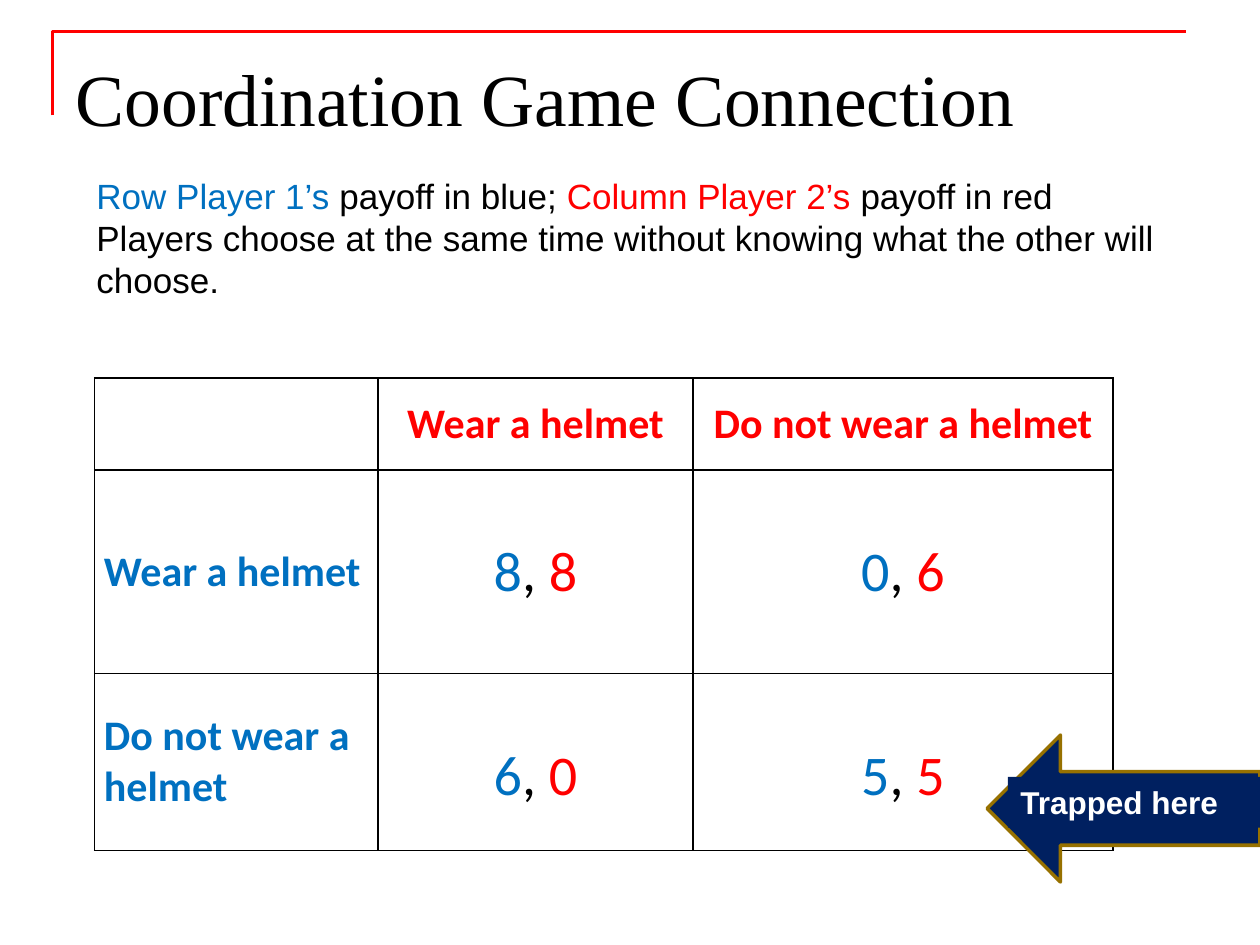
"""Build the coordination game slide with its payoff table."""
from lxml.etree import SubElement
from pptx import Presentation
from pptx.dml.color import RGBColor
from pptx.enum.shapes import MSO_SHAPE as Preset
from pptx.enum.text import MSO_ANCHOR as Anchor, PP_ALIGN as Align
from pptx.oxml.ns import qn
from pptx.util import Pt

COLORS = {"black": "000000", "blue": "0070C0", "red": "FF0000",
          "navy": "002060", "gold": "977100", "white": "FFFFFF"}
FORMATS = {
    "title": {"name": "Times New Roman", "size": Pt(42), "bold": False},
    "intro": {"name": "Arial", "size": Pt(20), "bold": False},
    "strategy": {"name": "Calibri", "size": Pt(24), "bold": True},
    "payoff": {"name": "Calibri", "size": Pt(32), "bold": False},
    "callout": {"name": "Arial", "size": Pt(18), "bold": True},
}


def color(key):
    return RGBColor.from_string(COLORS[key])


class GameSlide:
    def __init__(self, deck):
        self.slide = deck.slides.add_slide(deck.slide_layouts[5])
        self.shapes = self.slide.shapes

    def add_runs(self, paragraph, style, runs, align=Align.LEFT):
        paragraph.alignment = align
        for wording, tint in runs:
            run = paragraph.add_run()
            run.text = wording
            for attribute, value in FORMATS[style].items():
                setattr(run.font, attribute, value)
            run.font.color.rgb = color(tint)

    def paint(self, shape, fill=None, line=None, width=1):
        shape.shadow.inherit = False
        if fill:
            shape.fill.solid()
            shape.fill.fore_color.rgb = color(fill)
        else:
            shape.fill.background()
        if line:
            shape.line.color.rgb = color(line)
            shape.line.width = Pt(width)
        else:
            shape.line.fill.background()

    def corner(self, points):
        start, *others = [(Pt(x), Pt(y)) for x, y in points]
        builder = self.shapes.build_freeform(*start)
        builder.add_line_segments(others, close=False)
        self.paint(builder.convert_to_shape(), line="red", width=1.5)

    def title(self, wording, box):
        heading = self.shapes.title
        edges = ("left", "top", "width", "height")
        for edge, value in zip(edges, box):
            setattr(heading, edge, Pt(value))
        frame = heading.text_frame
        frame.vertical_anchor = Anchor.TOP
        frame.margin_top = Pt(8.5)
        self.add_runs(frame.paragraphs[0], "title", [(wording, "black")])

    def text(self, box, style, paragraphs):
        frame = self.shapes.add_textbox(*map(Pt, box)).text_frame
        frame.word_wrap = True
        for index, runs in enumerate(paragraphs):
            paragraph = frame.add_paragraph() if index else frame.paragraphs[0]
            self.add_runs(paragraph, style, runs)

    def block(self, preset, box, fill, line=None, width=1, label=None):
        shape = self.shapes.add_shape(preset, *map(Pt, box))
        self.paint(shape, fill, line, width)
        if label:
            shape.text_frame.word_wrap = True
            self.add_runs(shape.text_frame.paragraphs[0], "callout", [(label, "white")])

    def border(self, cell):
        properties = cell._tc.get_or_add_tcPr()
        for position, side in enumerate(("lnL", "lnR", "lnT", "lnB")):
            edge = SubElement(properties, qn(f"a:{side}"), w=str(Pt(1)))
            fill = SubElement(edge, qn("a:solidFill"))
            SubElement(fill, qn("a:srgbClr"), val=COLORS["black"])
            properties.insert(position, edge)

    def cell(self, cell, style, runs, align, anchor=Anchor.MIDDLE, top=0):
        margins = {"margin_left": 5.4, "margin_right": 5.4,
                   "margin_top": top, "margin_bottom": 0}
        for attribute, value in margins.items():
            setattr(cell, attribute, Pt(value))
        cell.vertical_anchor = anchor
        self.add_runs(cell.text_frame.paragraphs[0], style, runs, align)

    def payoff_table(self, box, widths, heights, strategies, payoffs):
        table = self.shapes.add_table(len(heights), len(widths), *map(Pt, box)).table
        table.first_row = table.horz_banding = False
        for column, width in zip(table.columns, widths):
            column.width = Pt(width)
        for row, height in zip(table.rows, heights):
            row.height = Pt(height)
        for cell in table.iter_cells():
            cell.fill.background()
            self.border(cell)
        for index, strategy in enumerate(strategies, 1):
            self.cell(table.cell(0, index), "strategy", [(strategy, "red")], Align.CENTER)
            self.cell(table.cell(index, 0), "strategy", [(strategy, "blue")], Align.LEFT)
        for row, pairs in enumerate(payoffs, 1):
            for column, (first, second) in enumerate(pairs, 1):
                runs = [(str(first), "blue"), (", ", "black"), (str(second), "red")]
                self.cell(table.cell(row, column), "payoff", runs,
                          Align.CENTER, Anchor.TOP, 39)


def main():
    deck = Presentation()
    deck.slide_width, deck.slide_height = Pt(720), Pt(540)
    game = GameSlide(deck)
    game.corner([(30, 66), (30, 18), (678, 18)])
    game.title("Coordination Game Connection", (36, 21.6, 648, 90))
    game.text((48, 96, 624, 101.5), "intro", [
        [("Row Player 1’s ", "blue"), ("payoff in blue; ", "black"),
         ("Column Player 2’s ", "red"), ("payoff in red", "black")],
        [("Players choose at the same time without knowing "
          "what the other will choose.", "black")],
    ])
    game.payoff_table((54, 216, 582, 270), (162, 180, 240), (52.5, 116.5, 101),
                      ("Wear a helmet", "Do not wear a helmet"),
                      [[(8, 8), (0, 6)], [(6, 0), (5, 5)]])
    game.block(Preset.LEFT_ARROW, (564, 420, 156, 84), "navy", "gold", 2)
    game.block(Preset.RECTANGLE, (576, 444, 144, 29), "navy", label="Trapped here")
    deck.save("out.pptx")


if __name__ == "__main__":
    main()
